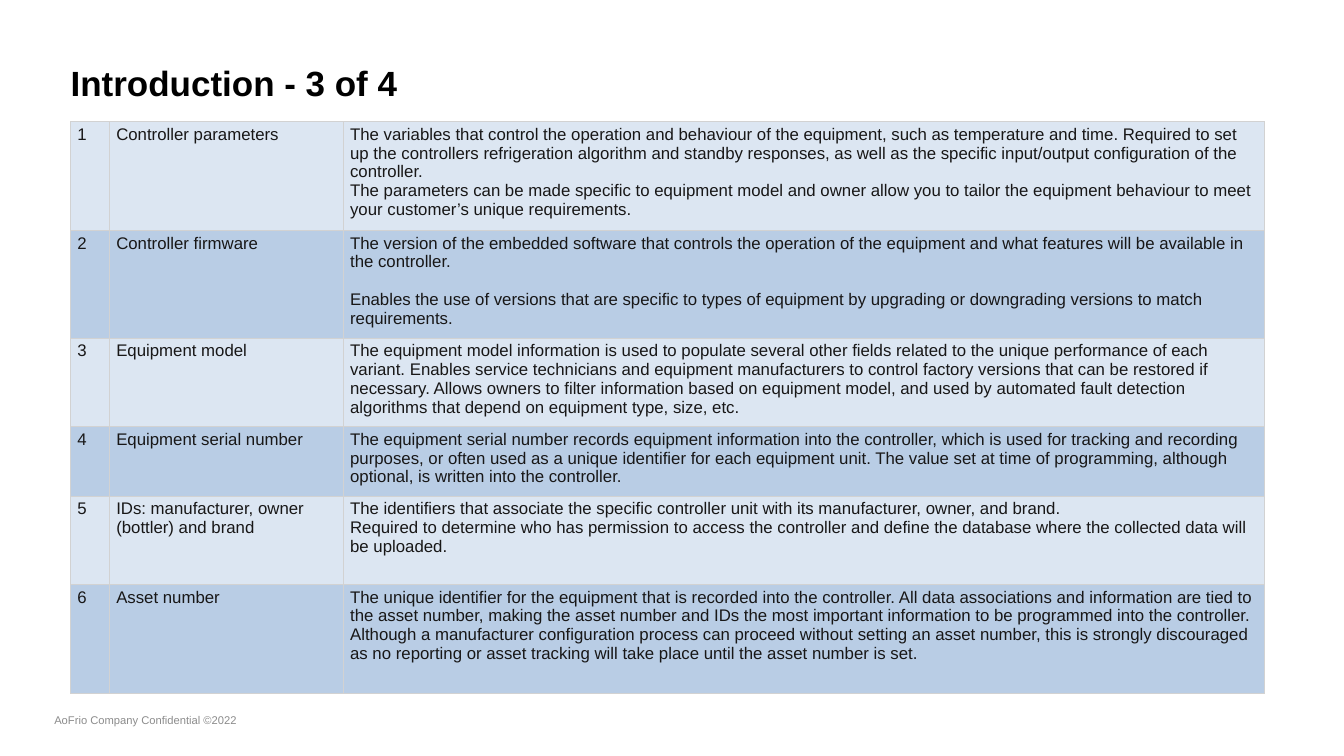
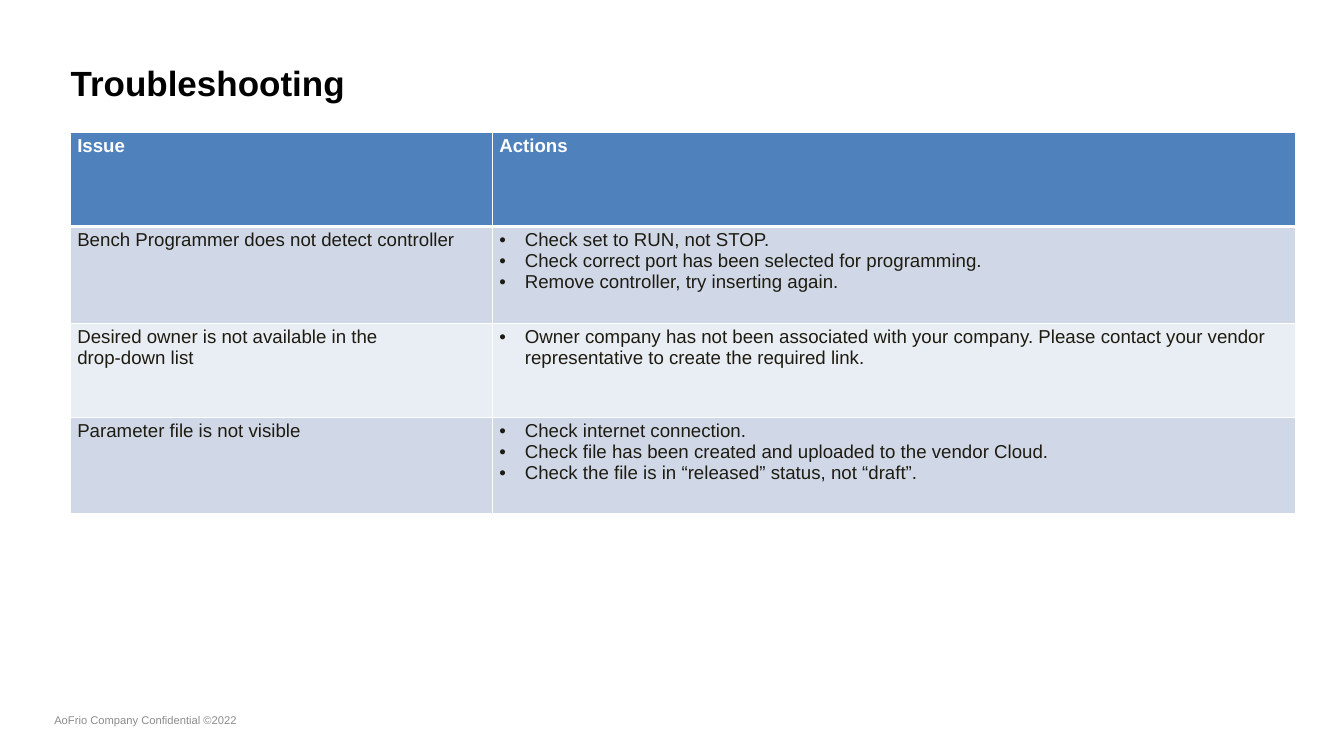
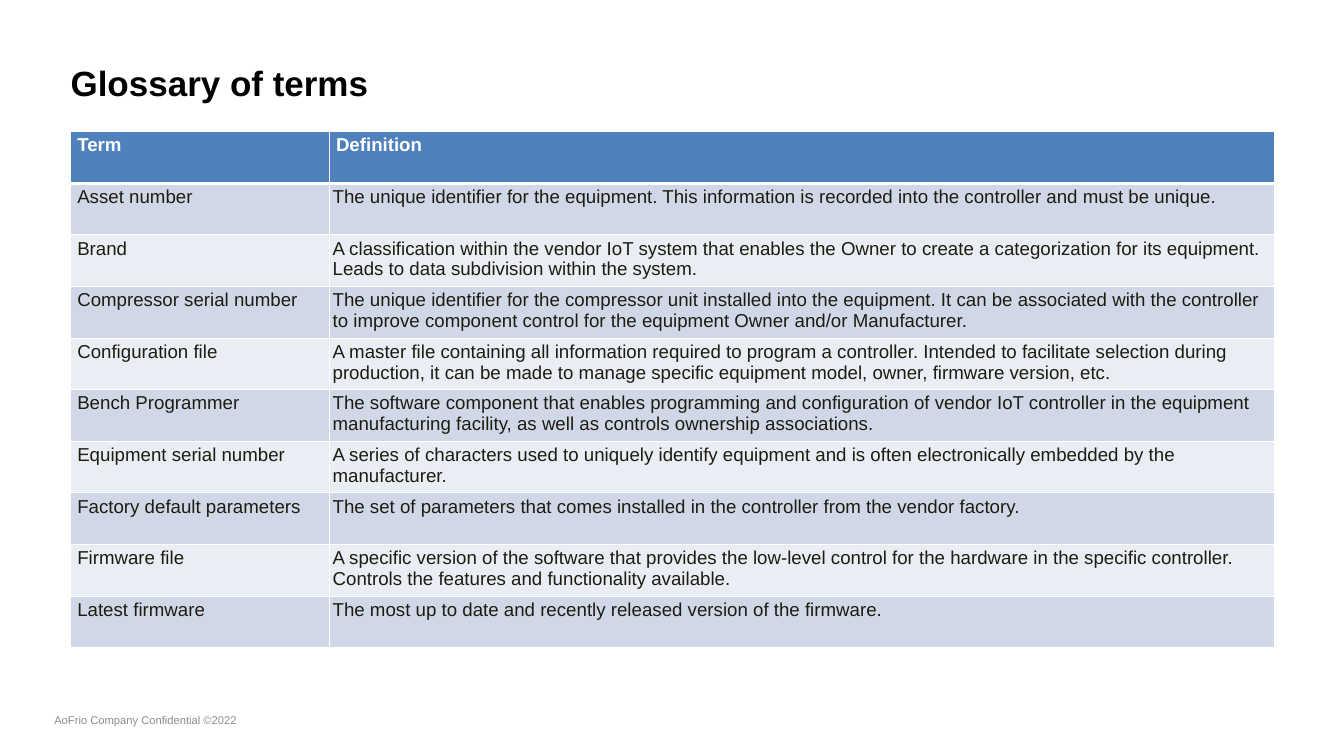
from lxml import etree
from pptx import Presentation
from pptx import util as u
from pptx.dml.color import RGBColor
from pptx.enum import text as t
from pptx.oxml.ns import qn

FOOTER = "AoFrio Company Confidential ©2022"

INTRODUCTION = [
    ("1", "Controller parameters", [
        "The variables that control the operation and behaviour of the equipment, such as temperature and time. "
        "Required to set up the controllers refrigeration algorithm and standby responses, as well as the specific "
        "input/output configuration of the controller.",
        "The parameters can be made specific to equipment model and owner allow you to tailor the equipment "
        "behaviour to meet your customer’s unique requirements."]),
    ("2", "Controller firmware", [
        "The version of the embedded software that controls the operation of the equipment and what features "
        "will be available in the controller.",
        "Enables the use of versions that are specific to types of equipment by upgrading or downgrading "
        "versions to match requirements."]),
    ("3", "Equipment model",
        "The equipment model information is used to populate several other fields related to the unique "
        "performance of each variant. Enables service technicians and equipment manufacturers to control factory "
        "versions that can be restored if necessary. Allows owners to filter information based on equipment model, "
        "and used by automated fault detection algorithms that depend on equipment type, size, etc."),
    ("4", "Equipment serial number",
        "The equipment serial number records equipment information into the controller, which is used for tracking "
        "and recording purposes, or often used as a unique identifier for each equipment unit. The value set at "
        "time of programming, although optional, is written into the controller."),
    ("5", "IDs: manufacturer, owner (bottler) and brand", [
        "The identifiers that associate the specific controller unit with its manufacturer, owner, and brand.",
        "Required to determine who has permission to access the controller and define the database where the "
        "collected data will be uploaded."]),
    ("6", "Asset number", [
        "The unique identifier for the equipment that is recorded into the controller. All data associations and "
        "information are tied to the asset number, making the asset number and IDs the most important information "
        "to be programmed into the controller.",
        "Although a manufacturer configuration process can proceed without setting an asset number, this is "
        "strongly discouraged as no reporting or asset tracking will take place until the asset number is set."]),
]

TROUBLESHOOTING = [
    ("Issue", "Actions"),
    ("Bench Programmer does not detect controller", [
        "Check set to RUN, not STOP.",
        "Check correct port has been selected for programming.",
        "Remove controller, try inserting again."]),
    ("Desired owner is not available in the\ndrop-down list", [
        "Owner company has not been associated with your company. Please contact your vendor representative "
        "to create the required link."]),
    ("Parameter file is not visible", [
        "Check internet connection.",
        "Check file has been created and uploaded to the vendor Cloud.",
        "Check the file is in “released” status, not “draft”."]),
]

GLOSSARY = [
    ("Term", "Definition"),
    ("Asset number", "The unique identifier for the equipment. This information is recorded into the controller "
                     "and must be unique."),
    ("Brand", "A classification within the vendor IoT system that enables the Owner to create a categorization "
              "for its equipment. Leads to data subdivision within the system."),
    ("Compressor serial number", "The unique identifier for the compressor unit installed into the equipment. It "
                                 "can be associated with the controller to improve component control for the "
                                 "equipment Owner and/or Manufacturer."),
    ("Configuration file", "A master file containing all information required to program a controller. Intended to "
                           "facilitate selection during production, it can be made to manage specific equipment "
                           "model, owner, firmware version, etc."),
    ("Bench Programmer", "The software component that enables programming and configuration of vendor IoT "
                         "controller in the equipment manufacturing facility, as well as controls ownership "
                         "associations."),
    ("Equipment serial number", "A series of characters used to uniquely identify equipment and is often "
                                "electronically embedded by the manufacturer."),
    ("Factory default parameters", "The set of parameters that comes installed in the controller from the vendor "
                                   "factory."),
    ("Firmware file", "A specific version of the software that provides the low-level control for the hardware in "
                      "the specific controller. Controls the features and functionality available."),
    ("Latest firmware", "The most up to date and recently released version of the firmware."),
]

THEME = {
    "title": {"name": "Arial", "size": 37.5, "color": "000000", "bold": True},
    "footer": {"name": "Arial", "size": 12, "color": "8C8C8C"},
    "header": {"name": "Arial", "size": 20, "color": "FFFFFF", "bold": True},
    "body": {"name": "Arial", "size": 20, "color": "1E1C11", "bold": False},
    "intro": {"name": "Arial", "size": 18, "color": "181717", "bold": False},
    "header_fill": "4F81BD",
    "bands": ("D0D8E8", "E9EDF4"),
    "intro_bands": ("DCE6F2", "B9CDE5"),
    "border": ("FFFFFF", 1),
    "intro_border": ("D2D2D2", 0.5),
    "header_rule": 3,
}
LEFT = 1.05
BULLET_INDENT = 0.38

SLIDES = [
    {"title": "Introduction - 3 of 4", "rows": INTRODUCTION, "top": 1.81, "widths": (0.58, 3.48, 13.7),
     "heights": (1.62, 1.6, 1.32, 1.03, 1.32, 1.62), "header": False, "gaps": {1: 20.5},
     "body": "intro", "bands": "intro_bands", "border": "intro_border"},
    {"title": "Troubleshooting", "rows": TROUBLESHOOTING, "top": 1.97, "widths": (6.28, 11.94),
     "heights": (1.4, 1.44, 1.4, 1.43), "bullets": True},
    {"title": "Glossary of terms", "rows": GLOSSARY, "top": 1.96, "widths": (3.85, 14.06),
     "heights": [7.68 / len(GLOSSARY)] * len(GLOSSARY), "last_margin": 0.05},
]


def apply(target, values):
    for name, value in values.items():
        setattr(target, name, value)


def write(paragraph, words, style):
    paragraph.text = words
    for run in paragraph.runs:
        apply(run.font, {"name": style["name"], "size": u.Pt(style["size"]), "bold": style.get("bold")})
        run.font.color.rgb = RGBColor.from_string(style["color"])


def set_margins(target, left, top, right, bottom):
    apply(target, {"margin_left": u.Inches(left), "margin_top": u.Inches(top),
                   "margin_right": u.Inches(right), "margin_bottom": u.Inches(bottom)})


def add_bullet(paragraph):
    props = paragraph._p.get_or_add_pPr()
    indent = u.Inches(BULLET_INDENT)
    props.set("marL", str(indent))
    props.set("indent", str(-indent))
    etree.SubElement(props, qn("a:buFont")).set("typeface", "Arial")
    etree.SubElement(props, qn("a:buChar")).set("char", "•")


def add_borders(cell, color, widths):
    props = cell._tc.get_or_add_tcPr()
    for side, width in zip("LRTB", widths):
        line = etree.SubElement(props, qn(f"a:ln{side}"), w=str(u.Pt(width)))
        fill = etree.SubElement(line, qn("a:solidFill"))
        etree.SubElement(fill, qn("a:srgbClr"), val=color)


def fill_cell(cell, content, style, bullets, gap):
    paragraphs = [content] if isinstance(content, str) else content
    frame = cell.text_frame
    for i, words in enumerate(paragraphs):
        paragraph = frame.add_paragraph() if i else frame.paragraphs[0]
        if i and gap:
            paragraph.space_before = u.Pt(gap)
        if bullets and paragraphs is content:
            add_bullet(paragraph)
        write(paragraph, words, style)


def add_grid(slide, page):
    rows, widths, heights = page["rows"], page["widths"], page["heights"]
    has_header = page.get("header", True)
    body = THEME[page.get("body", "body")]
    bands = THEME[page.get("bands", "bands")]
    border, thin = THEME[page.get("border", "border")]
    table = slide.shapes.add_table(len(rows), len(widths), u.Inches(LEFT), u.Inches(page["top"]),
                                   u.Inches(sum(widths)), u.Inches(sum(heights))).table
    apply(table, {"first_row": has_header, "horz_banding": True})
    for column, width in zip(table.columns, widths):
        column.width = u.Inches(width)
    for r, (row, height) in enumerate(zip(rows, heights)):
        table.rows[r].height = u.Inches(height)
        is_header = has_header and r == 0
        above = THEME["header_rule"] if has_header and r == 1 else thin
        below = THEME["header_rule"] if is_header else thin
        fill = THEME["header_fill"] if is_header else bands[(r - has_header) % 2]
        for c, content in enumerate(row):
            cell = table.cell(r, c)
            if "last_margin" in page and c == len(row) - 1 and not is_header:
                set_margins(cell, *[page["last_margin"]] * 4)
            add_borders(cell, border, (thin, thin, above, below))
            cell.fill.solid()
            cell.fill.fore_color.rgb = RGBColor.from_string(fill)
            fill_cell(cell, content, THEME["header"] if is_header else body,
                      page.get("bullets"), page.get("gaps", {}).get(r))


def add_title(slide, words):
    title = slide.shapes.title
    apply(title, {"left": u.Inches(LEFT), "top": u.Inches(0.89),
                  "width": u.Inches(15.13), "height": u.Inches(0.65)})
    frame = title.text_frame
    apply(frame, {"word_wrap": True, "auto_size": t.MSO_AUTO_SIZE.NONE, "vertical_anchor": t.MSO_ANCHOR.TOP})
    set_margins(frame, 0, 0.02, 0, 0)
    write(frame.paragraphs[0], words, THEME["title"])
    frame.paragraphs[0].alignment = t.PP_ALIGN.LEFT


def add_layout_footer(slide):
    footer = slide.shapes.add_textbox(u.Inches(0.71), u.Inches(10.51), u.Inches(4.5), u.Inches(0.4))
    apply(footer.text_frame, {"word_wrap": True, "vertical_anchor": t.MSO_ANCHOR.MIDDLE})
    write(footer.text_frame.paragraphs[0], FOOTER, THEME["footer"])
    slide.slide_layout.shapes.element.append(footer.element)


def main():
    deck = Presentation()
    apply(deck, {"slide_width": u.Inches(20), "slide_height": u.Inches(11.25)})
    layout = deck.slide_layouts.get_by_name("Title Only")
    for page in SLIDES:
        slide = deck.slides.add_slide(layout)
        add_title(slide, page["title"])
        add_grid(slide, page)
    add_layout_footer(deck.slides[0])
    deck.save("out.pptx")


if __name__ == "__main__":
    main()
